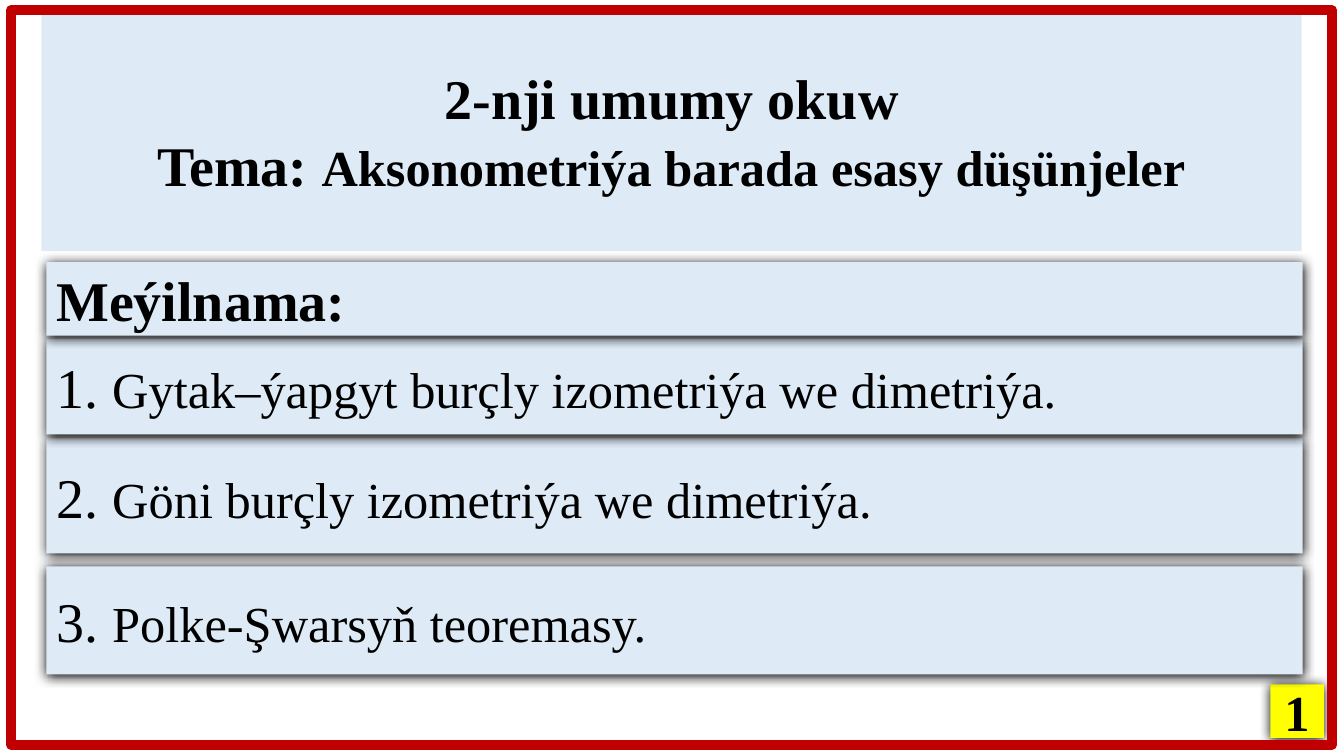
from dataclasses import dataclass

from lxml import etree
from pptx import Presentation
from pptx.dml.color import RGBColor
from pptx.enum.shapes import MSO_SHAPE
from pptx.enum.text import MSO_ANCHOR, PP_ALIGN
from pptx.oxml.ns import qn
from pptx.util import Inches, Pt

RECTANGLE = MSO_SHAPE.RECTANGLE
ROUNDED = MSO_SHAPE.ROUNDED_RECTANGLE
PLATE = MSO_SHAPE.PENTAGON
MIDDLE = MSO_ANCHOR.MIDDLE
LEFT, CENTER = PP_ALIGN.LEFT, PP_ALIGN.CENTER


@dataclass(frozen=True)
class Theme:
    font: str = "Times New Roman"
    text: str = "000000"
    panel: str = "DEEBF7"
    badge: str = "FFFF00"
    frame: str = "C00000"
    shadow: str = "000000"
    large: int = 40
    normal: int = 36
    frame_width: int = 7
    shadow_blur: float = 8.5
    shadow_distance: int = 1


THEME = Theme()
SLIDE_SIZE = (13.33, 7.5)

# Boxes are left, top, width, height in inches
FRAME_BOX = (0.11, 0.1, 13.1, 7.29)
TITLE_BOX = (0.41, 0.1, 12.5, 2.39)
PLAN_BOX = (0.46, 2.6, 12.46, 4.09)
BADGE_BOX = (12.6, 6.79, 0.53, 0.53)

# Each line is a list of (text, size) runs
TITLE_LINES = [
    [("2-nji umumy okuw", THEME.large)],
    [("Tema: ", THEME.large),
     ("Aksonometriýa barada esasy düşünjeler", THEME.normal)],
]
PLAN_HEADING = "Meýilnama:"
PLAN_TOPICS = [
    "Gytak–ýapgyt burçly izometriýa we dimetriýa.",
    "Göni burçly izometriýa we dimetriýa.",
    "Polke-Şwarsyň teoremasy.",
]
# Offset from the top of the plan and height of each row, in inches
PLAN_ROWS = [(0, 0.73), (0.76, 0.95), (1.75, 1.14), (3.02, 1.07)]


def add_shadow(shape):
    effects = shape._element.spPr.find(qn("a:effectLst"))
    shadow = etree.SubElement(
        effects, qn("a:outerShdw"), blurRad=str(Pt(THEME.shadow_blur)),
        dist=str(Pt(THEME.shadow_distance)), dir="5400000", algn="ctr",
        rotWithShape="0")
    etree.SubElement(shadow, qn("a:srgbClr"), val=THEME.shadow)


def add_panel(slide, kind, box, fill, shadow=False):
    shape = slide.shapes.add_shape(kind, *map(Inches, box))
    shape.shadow.inherit = False
    if kind != RECTANGLE:
        shape.adjustments[0] = 0
    if fill:
        shape.fill.solid()
        shape.fill.fore_color.rgb = RGBColor.from_string(fill)
    else:
        shape.fill.background()
    shape.line.fill.background()
    if shadow:
        add_shadow(shape)
    return shape


def write_lines(shape, lines, alignment, bold):
    frame = shape.text_frame
    frame.word_wrap = True
    frame.vertical_anchor = MIDDLE
    for index, runs in enumerate(lines):
        paragraph = frame.add_paragraph() if index else frame.paragraphs[0]
        paragraph.alignment = alignment
        paragraph.font.name = THEME.font
        paragraph.font.bold = bold
        paragraph.font.color.rgb = RGBColor.from_string(THEME.text)
        paragraph.font.size = Pt(runs[0][1])
        for text, size in runs:
            run = paragraph.add_run()
            run.text = text
            if size != runs[0][1]:
                run.font.size = Pt(size)


def add_badge(slide, box):
    badge = add_panel(slide, RECTANGLE, box, THEME.badge, shadow=True)
    write_lines(badge, [[("1", THEME.normal)]], CENTER, bold=True)


def add_title(slide, box):
    title = add_panel(slide, ROUNDED, box, THEME.panel)
    write_lines(title, TITLE_LINES, CENTER, bold=True)


def add_plan(slide, box):
    left, top, width, _ = box
    lines = [[(PLAN_HEADING, THEME.large)]]
    lines += [[(f"{number}. ", THEME.large), (topic, THEME.normal)]
              for number, topic in enumerate(PLAN_TOPICS, 1)]
    rows = list(enumerate(zip(PLAN_ROWS, lines)))
    # Bottom row first, so that each row casts its shadow on the one below
    for index, ((offset, height), line) in reversed(rows):
        row = add_panel(slide, PLATE, (left, top + offset, width, height),
                        THEME.panel, shadow=True)
        write_lines(row, [line], LEFT, bold=index == 0)


def add_frame(slide, box):
    frame = add_panel(slide, RECTANGLE, box, None)
    frame.line.color.rgb = RGBColor.from_string(THEME.frame)
    frame.line.width = Pt(THEME.frame_width)


def main():
    presentation = Presentation()
    presentation.slide_width, presentation.slide_height = map(Inches, SLIDE_SIZE)
    slide = presentation.slides.add_slide(presentation.slide_layouts[6])
    add_badge(slide, BADGE_BOX)
    add_title(slide, TITLE_BOX)
    add_plan(slide, PLAN_BOX)
    add_frame(slide, FRAME_BOX)
    presentation.save("out.pptx")


if __name__ == "__main__":
    main()
